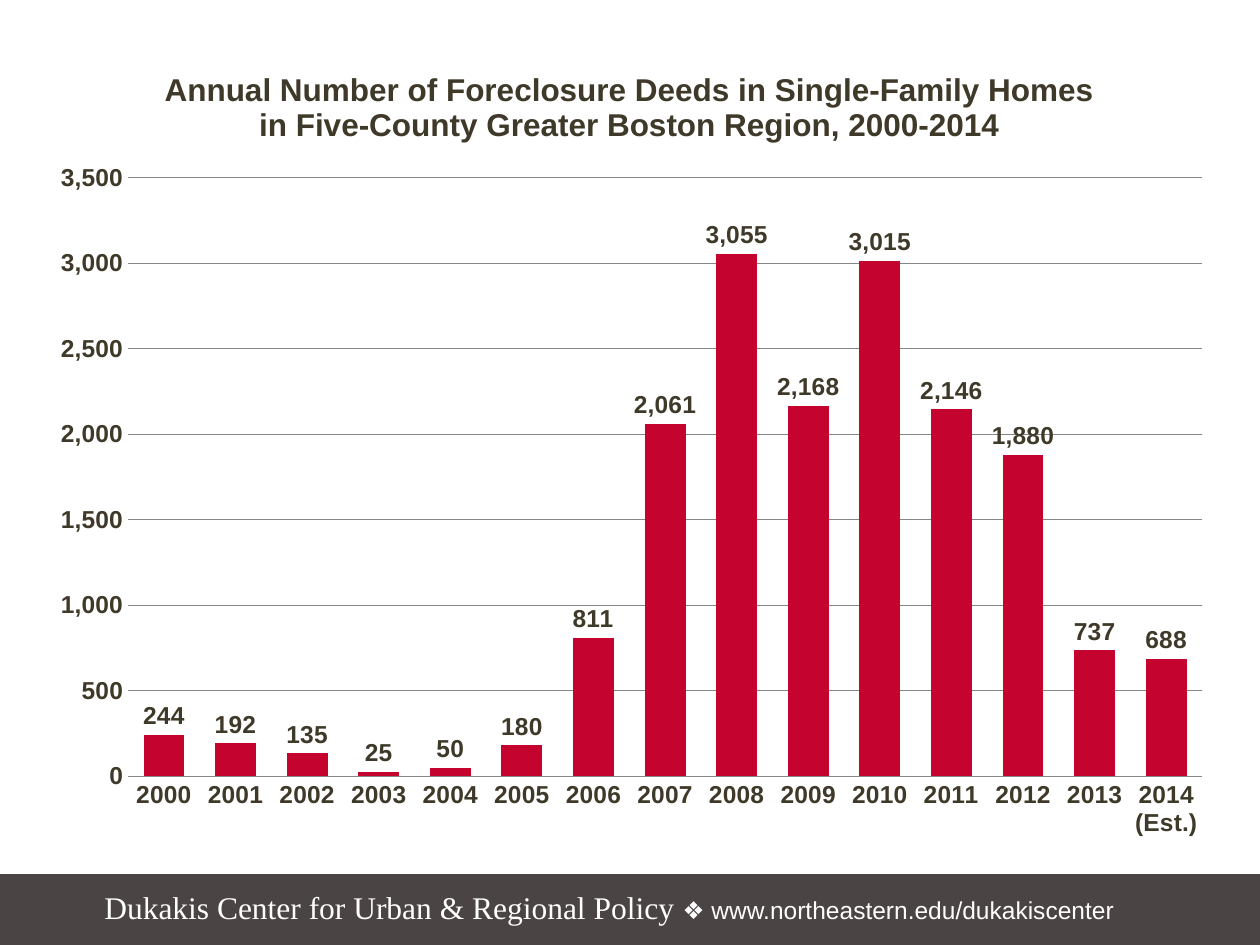
from dataclasses import dataclass

from lxml.etree import SubElement
from pptx import Presentation
from pptx.chart.data import CategoryChartData
from pptx.dml.color import RGBColor
from pptx.enum.chart import XL_CHART_TYPE, XL_LABEL_POSITION, XL_TICK_MARK
from pptx.enum.shapes import MSO_SHAPE
from pptx.oxml.ns import qn
from pptx.util import Inches, Pt


@dataclass(frozen=True)
class Theme:
    text: RGBColor = RGBColor.from_string("3F3929")
    bar: RGBColor = RGBColor.from_string("C4032F")
    band: RGBColor = RGBColor.from_string("4B4444")
    grid: RGBColor = RGBColor.from_string("868686")
    white: RGBColor = RGBColor.from_string("FFFFFF")
    sans: str = "Arial"
    serif: str = "Times New Roman"
    large: Pt = Pt(18)
    medium: Pt = Pt(14)
    base: Pt = Pt(10)


THEME = Theme()
TITLE = ("Annual Number of Foreclosure Deeds in Single-Family Homes "
         "in Five-County Greater Boston Region, 2000-2014")
YEARS = [str(year) for year in range(2000, 2014)] + ["2014 (Est.)"]
DEEDS = [244, 192, 135, 25, 50, 180, 811, 2061, 3055, 2168, 3015, 2146,
         1880, 737, 688]


def style_font(font, size, color=THEME.text, name=THEME.sans, bold=False):
    font.size, font.name, font.bold = size, name, bold
    font.color.rgb = color


def set_plot_layout(chart, x, y, w, h):
    """Fix the inner plot area, in fractions of the chart."""
    area = chart.plots[0]._element.getparent()
    for old in area.findall(qn("c:layout")):
        area.remove(old)
    layout = SubElement(area, qn("c:layout"))
    area.insert(0, layout)
    manual = SubElement(layout, qn("c:manualLayout"))
    settings = {"layoutTarget": "inner", "xMode": "edge", "yMode": "edge",
                "x": x, "y": y, "w": w, "h": h}
    for tag, value in settings.items():
        SubElement(manual, qn(f"c:{tag}")).set("val", str(value))


def add_deeds_chart(slide, left, top, width, height):
    data = CategoryChartData(number_format="#,##0")
    data.categories = YEARS
    data.add_series("Series 1", DEEDS)
    chart = slide.shapes.add_chart(
        XL_CHART_TYPE.COLUMN_CLUSTERED, left, top, width, height, data).chart
    style_font(chart.font, THEME.base)
    chart.has_legend = False

    chart.has_title = True
    p = chart.chart_title.text_frame.paragraphs[0]
    p.text = TITLE
    style_font(p.font, THEME.large, bold=True)
    chart.chart_title.include_in_layout = False

    for axis in (chart.category_axis, chart.value_axis):
        axis.major_tick_mark = axis.minor_tick_mark = XL_TICK_MARK.NONE
        style_font(axis.tick_labels.font, THEME.medium, bold=True)
    chart.category_axis.format.line.color.rgb = THEME.grid

    values = chart.value_axis
    values.minimum_scale, values.maximum_scale, values.major_unit = 0, 3500, 500
    values.tick_labels.number_format = "#,##0"
    values.tick_labels.number_format_is_linked = False
    values.format.line.fill.background()
    values.has_major_gridlines = True
    values.major_gridlines.format.line.color.rgb = THEME.grid
    values.major_gridlines.format.line.width = Pt(0.75)

    plot = chart.plots[0]
    plot.gap_width, plot.overlap, plot.vary_by_categories = 75, -25, False
    fill = plot.series[0].format.fill
    fill.solid()
    fill.fore_color.rgb = THEME.bar

    labels = plot.series[0].data_labels
    labels.show_value = True
    labels.number_format = "#,##0"
    labels.number_format_is_linked = False
    labels.position = XL_LABEL_POSITION.OUTSIDE_END
    style_font(labels.font, THEME.medium, bold=True)
    set_plot_layout(chart, x=0.08, y=0.17, w=0.9, h=0.74)


def add_footer(slide, left, top, width, height):
    band = slide.shapes.add_shape(MSO_SHAPE.RECTANGLE, left, top, width, height)
    band.shadow.inherit = False
    band.fill.solid()
    band.fill.fore_color.rgb = band.line.color.rgb = THEME.band
    band.line.width = Pt(0.75)

    box = slide.shapes.add_textbox(
        left + Inches(0.74), top + Inches(0.06), Inches(8.53), Inches(0.4))
    box.text_frame.word_wrap = True
    p = box.text_frame.paragraphs[0]
    for text, size, name in (
            ("Dukakis Center for Urban & Regional Policy ", THEME.large, THEME.serif),
            ("❖ www.northeastern.edu/dukakiscenter", THEME.medium, THEME.sans)):
        r = p.add_run()
        r.text = text
        style_font(r.font, size, THEME.white, name)


def main():
    prs = Presentation()
    prs.slide_width, prs.slide_height = Inches(10), Inches(7.5)
    slide = prs.slides.add_slide(prs.slide_layouts[6])
    add_footer(slide, Inches(-0.01), Inches(6.94), Inches(10.04), Inches(0.58))
    add_deeds_chart(slide, Inches(0.26), Inches(0.32), Inches(9.47), Inches(6.42))
    prs.save("out.pptx")


if __name__ == "__main__":
    main()
